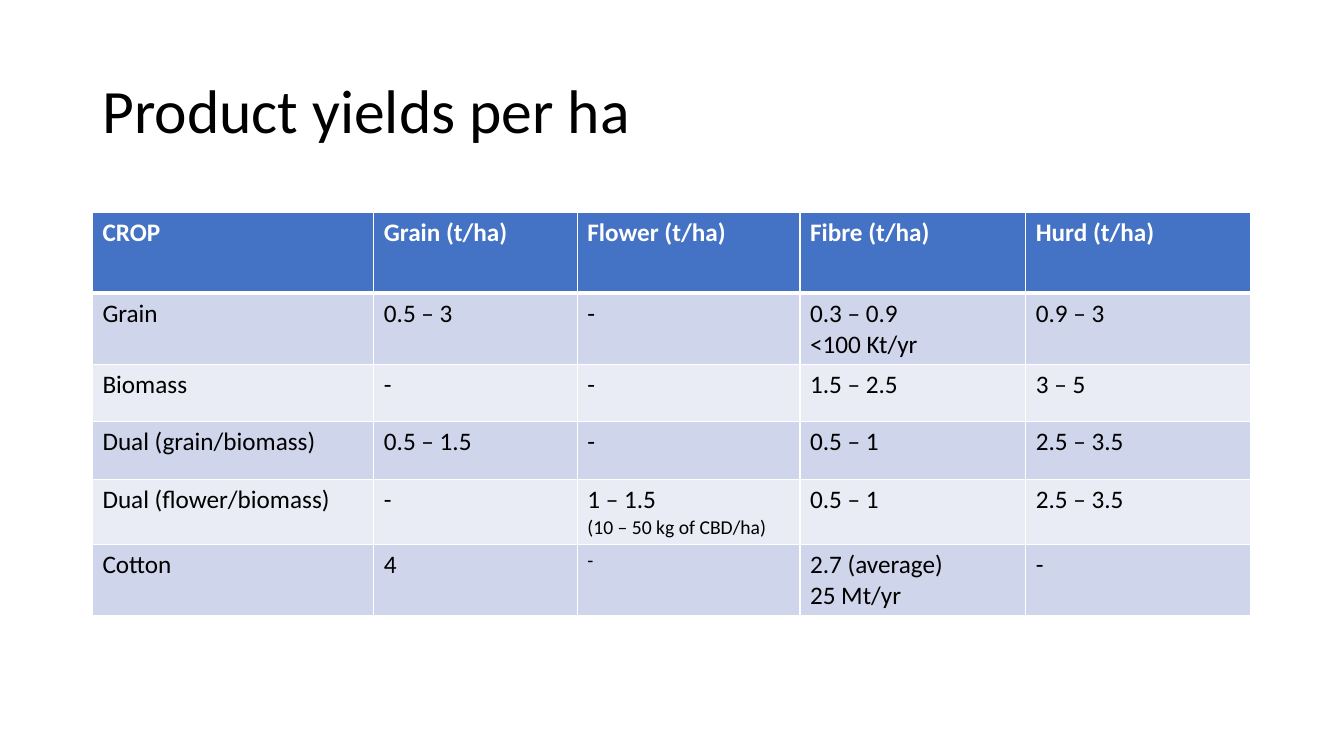
from dataclasses import dataclass

from lxml.etree import SubElement
from pptx import Presentation
from pptx.dml.color import RGBColor
from pptx.enum.text import MSO_ANCHOR, MSO_AUTO_SIZE, PP_ALIGN
from pptx.oxml.ns import qn
from pptx.slide import Slide
from pptx.table import _Cell
from pptx.text.text import _Paragraph
from pptx.util import Cm, Pt

COLOURS = {
    "header": "4472C4",
    "odd": "CFD5EA",
    "even": "E9EBF5",
    "light": "FFFFFF",
    "dark": "000000",
}
FONT = "Calibri"
COLUMN_WIDTHS = (7.09, 5.13, 5.61, 5.69, 5.66)


@dataclass(frozen=True)
class CropRow:
    height: float
    entries: tuple[str, ...]


CROP_ROWS = (
    CropRow(2.03, ("CROP", "Grain (t/ha)", "Flower (t/ha)", "Fibre (t/ha)", "Hurd (t/ha)")),
    CropRow(1.42, ("Grain", "0.5 – 3", "-", "0.3 – 0.9\n<100 Kt/yr", "0.9 – 3")),
    CropRow(1.42, ("Biomass", "-", "-", "1.5 – 2.5", "3 – 5")),
    CropRow(1.47, ("Dual (grain/biomass)", "0.5 – 1.5", "-", "0.5 – 1", "2.5 – 3.5")),
    CropRow(1.42, ("Dual (flower/biomass)", "-", "1 – 1.5\n(10 – 50 kg of CBD/ha)", "0.5 – 1", "2.5 – 3.5")),
    CropRow(1.42, ("Cotton", "4", "-", "2.7 (average)\n25 Mt/yr", "-")),
)
SMALL_PARAGRAPHS = {(4, 2, 1), (5, 2, 0)}


def format_runs(paragraph: _Paragraph, size: int, colour: str, bold: bool = False) -> None:
    for run in paragraph.runs:
        run.font.name = FONT
        run.font.size = Pt(size)
        run.font.bold = bold
        run.font.color.rgb = RGBColor.from_string(COLOURS[colour])


def add_borders(cell: _Cell, top: int, bottom: int) -> None:
    properties = cell._tc.get_or_add_tcPr()
    for side, width in (("L", 1), ("R", 1), ("T", top), ("B", bottom)):
        border = SubElement(properties, qn(f"a:ln{side}"), w=str(Pt(width)))
        fill = SubElement(border, qn("a:solidFill"))
        SubElement(fill, qn("a:srgbClr"), val=COLOURS["light"])


def fill_cell(cell: _Cell, entry: str, row: int, column: int) -> None:
    is_header = row == 0
    band = "header" if is_header else "odd" if row % 2 else "even"
    add_borders(cell, top=3 if row == 1 else 1, bottom=3 if is_header else 1)
    cell.fill.solid()
    cell.fill.fore_color.rgb = RGBColor.from_string(COLOURS[band])
    cell.text_frame.text = entry
    for index, paragraph in enumerate(cell.text_frame.paragraphs):
        size = 14 if (row, column, index) in SMALL_PARAGRAPHS else 18
        format_runs(paragraph, size, "light" if is_header else "dark", is_header)


def add_title(slide: Slide) -> None:
    heading = slide.shapes.title
    heading.left, heading.top = Cm(2.33), Cm(1.01)
    heading.width, heading.height = Cm(29.21), Cm(3.68)
    frame = heading.text_frame
    frame.text = "Product yields per ha"
    frame.word_wrap = True
    frame.auto_size = MSO_AUTO_SIZE.NONE
    frame.vertical_anchor = MSO_ANCHOR.MIDDLE
    paragraph = frame.paragraphs[0]
    paragraph.alignment = PP_ALIGN.LEFT
    paragraph.line_spacing = 0.9
    format_runs(paragraph, 44, "dark")


def add_yields(slide: Slide) -> None:
    yields = slide.shapes.add_table(
        len(CROP_ROWS), len(COLUMN_WIDTHS), Cm(2.33), Cm(5.36),
        Cm(sum(COLUMN_WIDTHS)), Cm(sum(crop.height for crop in CROP_ROWS)),
    ).table
    for column, width in zip(yields.columns, COLUMN_WIDTHS):
        column.width = Cm(width)
    for row, crop in enumerate(CROP_ROWS):
        yields.rows[row].height = Cm(crop.height)
        for column, entry in enumerate(crop.entries):
            fill_cell(yields.cell(row, column), entry, row, column)


def main() -> None:
    """Build the slide of product yields per hectare."""
    presentation = Presentation()
    presentation.slide_width, presentation.slide_height = Cm(33.87), Cm(19.05)
    slide = presentation.slides.add_slide(presentation.slide_layouts.get_by_name("Title Only"))
    add_title(slide)
    add_yields(slide)
    presentation.save("out.pptx")


if __name__ == "__main__":
    main()
